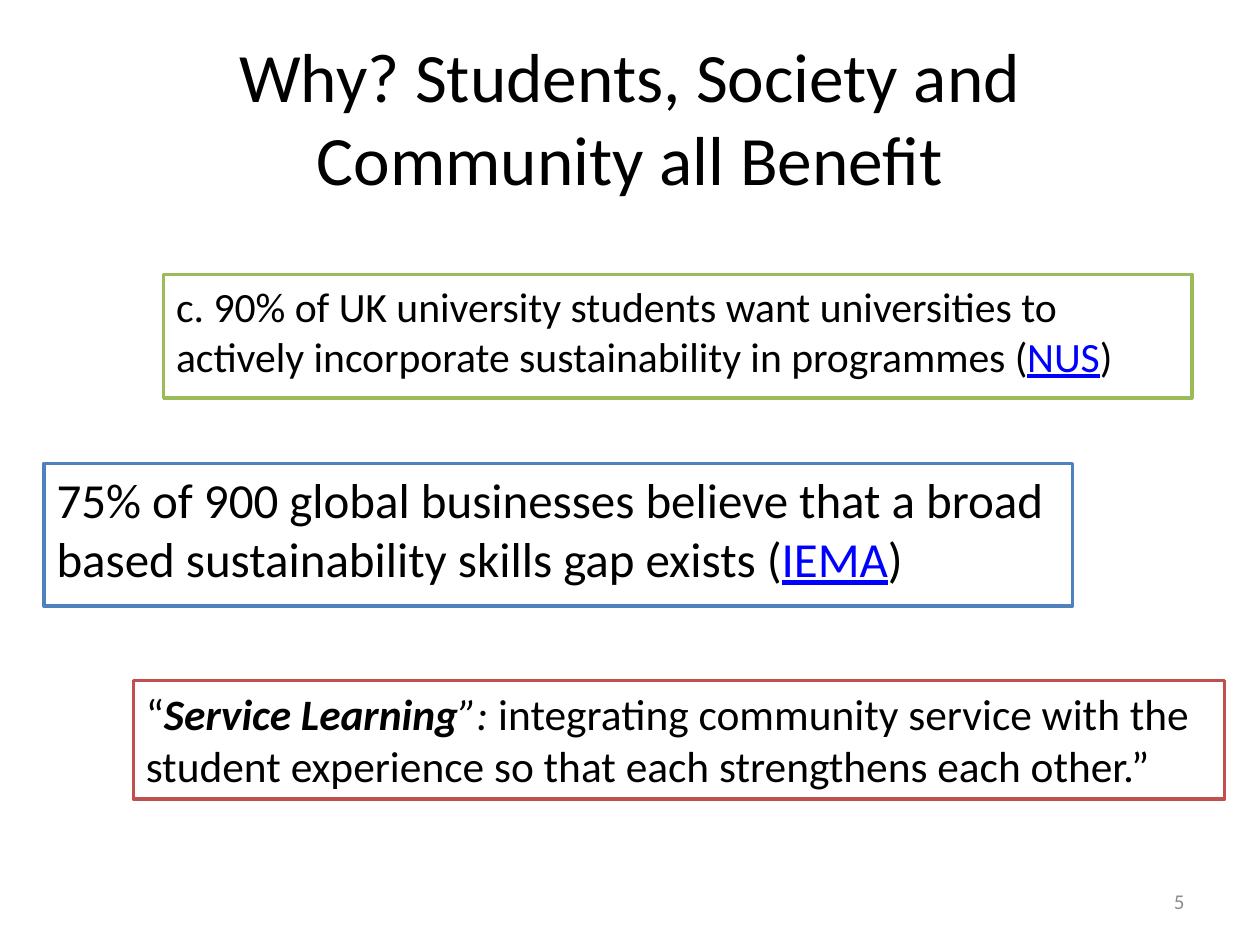
import pptx
import pptx.util
import pptx.dml.color
import pptx.enum.shapes
import pptx.enum.text

Cm = pptx.util.Cm
Pt = pptx.util.Pt
RGB = pptx.dml.color.RGBColor
Align = pptx.enum.text.PP_ALIGN
Anchor = pptx.enum.text.MSO_ANCHOR

BLACK = RGB(0x00, 0x00, 0x00)
WHITE = RGB(0xFF, 0xFF, 0xFF)
GRAY = RGB(0x8C, 0x8C, 0x8C)
LINK = RGB(0x00, 0x00, 0xFF)
GREEN = RGB(0x9B, 0xBB, 0x59)
BLUE = RGB(0x4F, 0x81, 0xBD)
RED = RGB(0xC0, 0x50, 0x4D)

LABELS = [
    ((1.27, 0.76, 22.86, 3.18), 39.6, BLACK, Align.CENTER,
     "Why? Students, Society and Community all Benefit"),
    ((18.2, 17.65, 5.93, 1.02), 12, GRAY, Align.RIGHT, "5"),
]

CARDS = [
    ((3.3, 5.53, 20.73, 2.49), 23.8, GREEN, [
        ("c. 90% of UK university students want universities to actively "
         "incorporate sustainability in programmes (", ""),
        ("NUS", "link"),
        (")", ""),
    ]),
    ((0.89, 9.34, 20.73, 2.88), 28, BLUE, [
        ("75% of 900 global businesses believe that a broad based "
         "sustainability skills gap exists (", ""),
        ("IEMA", "link"),
        (")", ""),
    ]),
    ((2.69, 13.72, 22, 2.39), 24.8, RED, [
        ("“", ""),
        ("Service Learning", "bold italic"),
        ("”:", "italic"),
        (" integrating community service with the student experience "
         "so that each strengthens each other.”", ""),
    ]),
]


def write(shape, runs, size, color, align, anchor):
    frame = shape.text_frame
    frame.word_wrap = True
    frame.vertical_anchor = anchor
    para = frame.paragraphs[0]
    para.alignment = align
    para.font.name = "Calibri"
    para.font.size = Pt(size)
    para.font.color.rgb = color
    for text, style in runs:
        run = para.add_run()
        run.text = text
        run.font.color.rgb = color
        if "bold" in style:
            run.font.bold = True
        if "italic" in style:
            run.font.italic = True
        if "link" in style:
            run.font.color.rgb = LINK
            run.font.underline = True


def main():
    deck = pptx.Presentation()
    deck.slide_width, deck.slide_height = Cm(25.4), Cm(19.05)
    shapes = deck.slides.add_slide(deck.slide_layouts[6]).shapes

    for area, size, color, align, text in LABELS:
        label = shapes.add_textbox(*map(Cm, area))
        write(label, [(text, "")], size, color, align, Anchor.MIDDLE)

    for area, size, edge, runs in CARDS:
        card = shapes.add_shape(
            pptx.enum.shapes.MSO_SHAPE.RECTANGLE, *map(Cm, area))
        card.shadow.inherit = False
        card.fill.solid()
        card.fill.fore_color.rgb = WHITE
        card.line.color.rgb = edge
        card.line.width = Pt(2)
        write(card, runs, size, BLACK, Align.LEFT, Anchor.TOP)

    deck.save("out.pptx")


if __name__ == "__main__":
    main()
